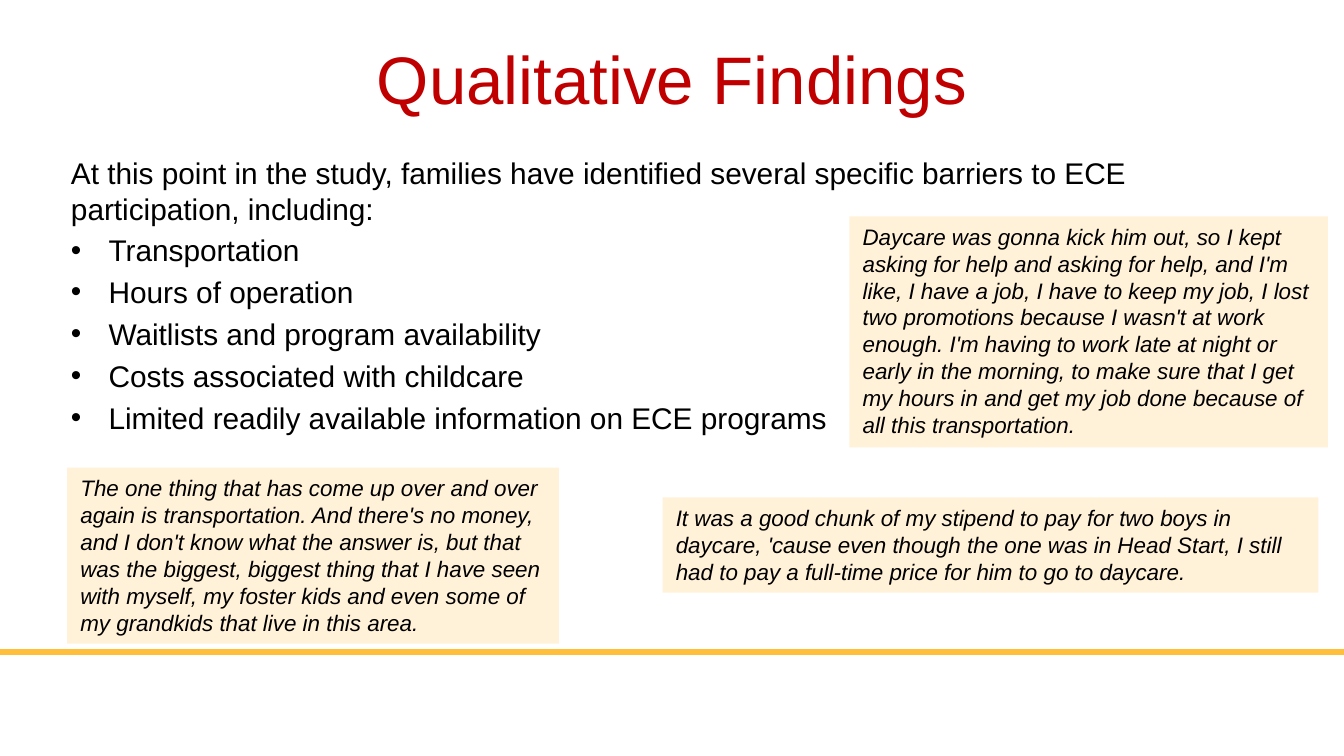
from dataclasses import dataclass

from lxml.etree import SubElement
from pptx import Presentation
from pptx.dml.color import RGBColor
from pptx.enum.shapes import MSO_CONNECTOR as Connector, MSO_SHAPE as Shape
from pptx.enum.text import MSO_ANCHOR as Anchor, MSO_AUTO_SIZE as AutoSize, PP_ALIGN as Align
from pptx.oxml.ns import qn
from pptx.util import Inches, Pt

WIDTH = Inches(10)
HEIGHT = WIDTH * 9 // 16
COLUMN = ROW = WIDTH // 100
COLOURS = {"title": "C00000", "text": "000000", "quote": "FFF2D8", "rule": "FFBF3B"}
INDENT = Inches(0.28)


@dataclass
class Area:
    """A rectangle in columns and rows of a grid of square cells, 100 across."""
    left: float
    top: float
    width: float
    height: float

    def place(self) -> tuple[int, int, int, int]:
        return (int(self.left * COLUMN), int(self.top * ROW),
                int(self.width * COLUMN), int(self.height * ROW))


@dataclass
class Quote:
    area: Area
    text: str


TITLE_AREA = Area(5, 2.3, 90, 9.4)
BODY_AREA = Area(4.3, 11, 82.7, 19.1)
RULE_ROW = 48.5

INTRO = ("At this point in the study, families have identified several specific "
         "barriers to ECE participation, including:")
BARRIERS = [
    "Transportation",
    "Hours of operation",
    "Waitlists and program availability",
    "Costs associated with childcare",
    "Limited readily available information on ECE programs",
]
QUOTES = [
    Quote(Area(5, 34.8, 36.6, 13.1),
          "The one thing that has come up over and over again is transportation. "
          "And there's no money, and I don't know what the answer is, but that was "
          "the biggest, biggest thing that I have seen with myself, my foster kids "
          "and even some of my grandkids that live in this area."),
    Quote(Area(63.2, 16.1, 35.6, 17.2),
          "Daycare was gonna kick him out, so I kept asking for help and asking for "
          "help, and I'm like, I have a job, I have to keep my job, I lost two "
          "promotions because I wasn't at work enough. I'm having to work late at "
          "night or early in the morning, to make sure that I get my hours in and "
          "get my job done because of all this transportation."),
    Quote(Area(49.3, 37, 48.8, 7.1),
          "It was a good chunk of my stipend to pay for two boys in daycare, 'cause "
          "even though the one was in Head Start, I still had to pay a full-time "
          "price for him to go to daycare."),
]


def colour(name: str) -> RGBColor:
    return RGBColor.from_string(COLOURS[name])


def write(para, text: str, tone: str = "text", **formats) -> None:
    span = para.add_run()
    span.text = text
    for name, value in {"name": "Arial", **formats}.items():
        setattr(span.font, name, value)
    span.font.color.rgb = colour(tone)


def add_bullet(para) -> None:
    properties = para._p.get_or_add_pPr()
    properties.set("marL", str(INDENT))
    properties.set("indent", str(-INDENT))
    SubElement(properties, qn("a:buFont"), typeface="Arial")
    SubElement(properties, qn("a:buChar"), char="•")


def prepare(frame) -> None:
    frame.word_wrap = True
    frame.vertical_anchor = Anchor.TOP


def draw_rule(page) -> None:
    top = int(RULE_ROW * ROW)
    rule = page.shapes.add_connector(Connector.STRAIGHT, 0, top, WIDTH, top)
    rule.line.color.rgb = colour("rule")
    rule.line.width = Pt(3)
    SubElement(rule._element.spPr, qn("a:effectLst"))


def draw_title(page) -> None:
    frame = page.shapes.add_textbox(*TITLE_AREA.place()).text_frame
    prepare(frame)
    para = frame.paragraphs[0]
    para.alignment = Align.CENTER
    write(para, "Qualitative Findings", "title", size=Pt(36))


def draw_barriers(page) -> None:
    frame = page.shapes.add_textbox(*BODY_AREA.place()).text_frame
    prepare(frame)
    write(frame.paragraphs[0], INTRO, size=Pt(16))
    for barrier in BARRIERS:
        para = frame.add_paragraph()
        add_bullet(para)
        para.space_before = Pt(3.2)
        write(para, barrier, size=Pt(16))


def draw_quote(page, quote: Quote) -> None:
    box = page.shapes.add_shape(Shape.RECTANGLE, *quote.area.place())
    box.shadow.inherit = False
    box.fill.solid()
    box.fill.fore_color.rgb = colour("quote")
    box.line.fill.background()
    prepare(box.text_frame)
    box.text_frame.auto_size = AutoSize.SHAPE_TO_FIT_TEXT
    para = box.text_frame.paragraphs[0]
    para.alignment = Align.LEFT
    write(para, quote.text, size=Pt(12), italic=True)


def main() -> None:
    deck = Presentation()
    deck.slide_width, deck.slide_height = WIDTH, HEIGHT
    page = deck.slides.add_slide(deck.slide_layouts[6])
    draw_rule(page)
    draw_title(page)
    draw_barriers(page)
    for quote in QUOTES:
        draw_quote(page, quote)
    deck.save("out.pptx")


if __name__ == "__main__":
    main()
